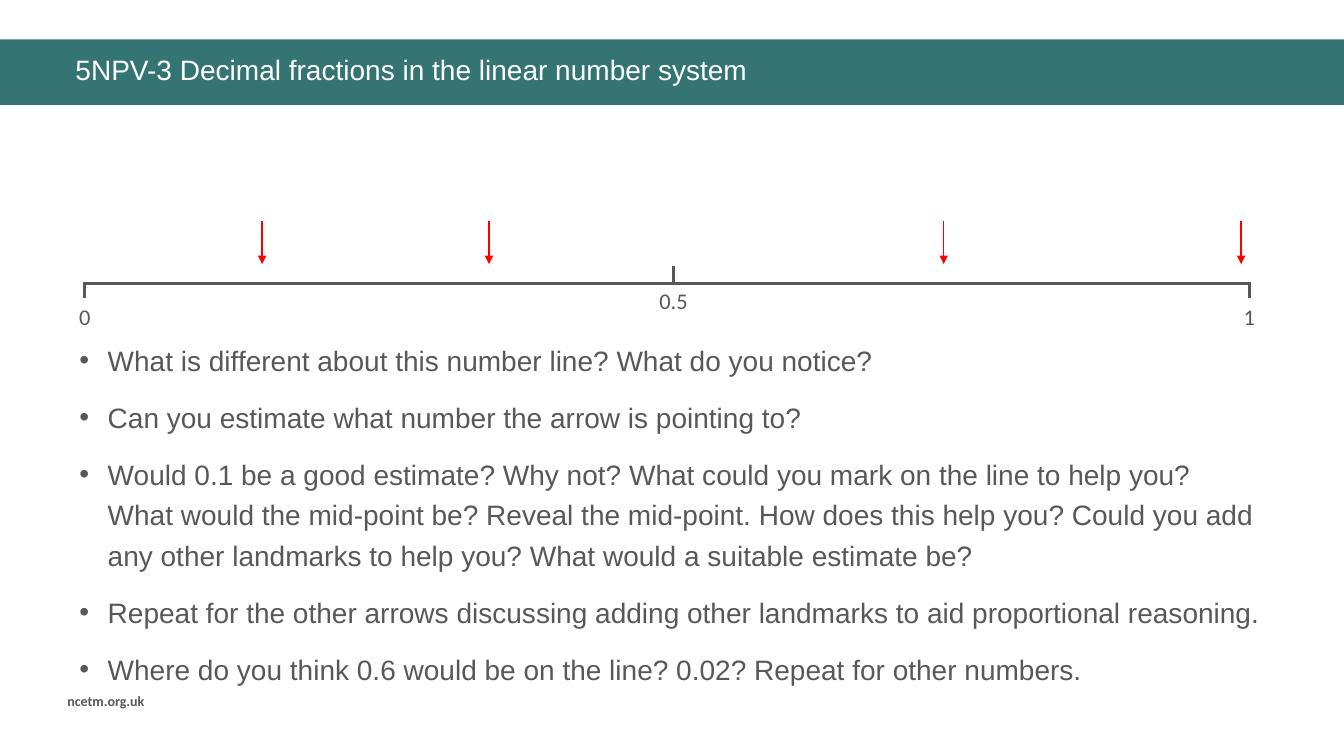
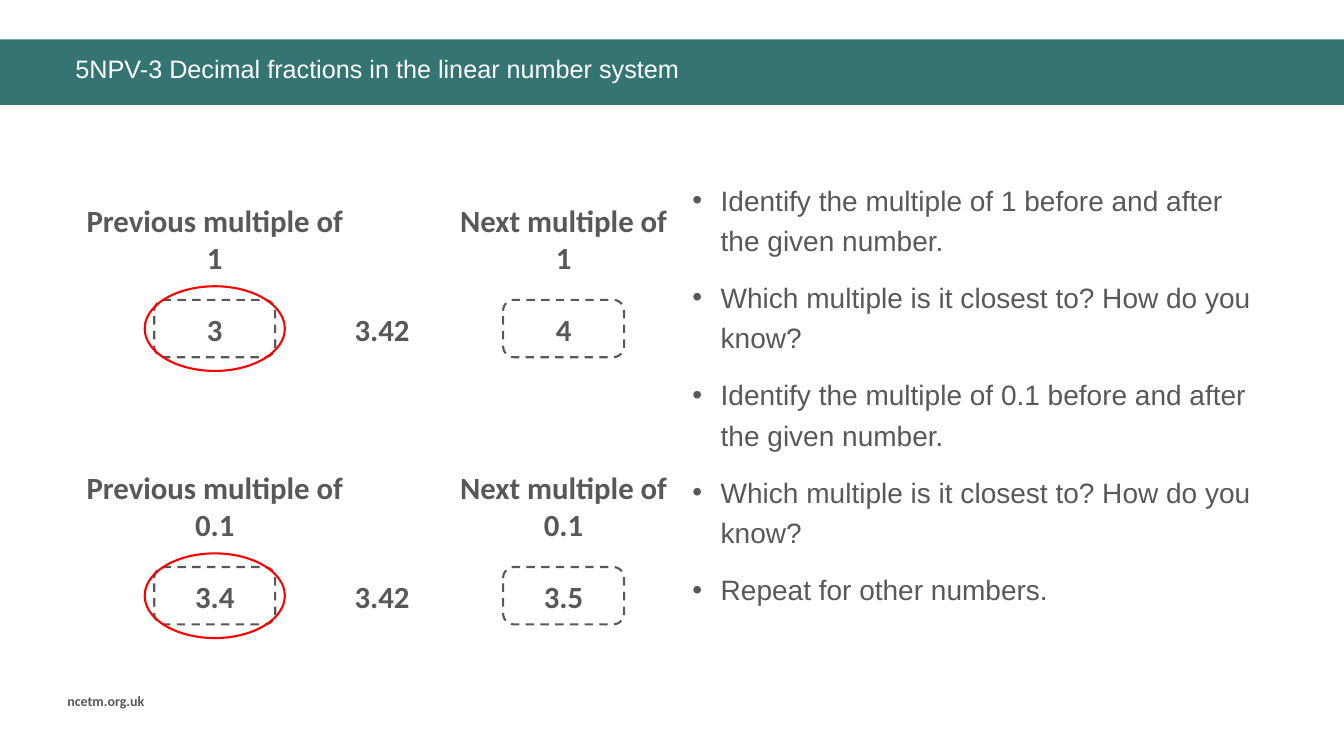
from lxml import etree
from pptx import Presentation
from pptx import util as u
from pptx.dml.color import RGBColor
from pptx.enum import dml, shapes, text
from pptx.oxml.ns import qn

TEAL = RGBColor(0x34, 0x75, 0x74)
GREY = RGBColor(0x58, 0x58, 0x58)
RED = RGBColor(0xFF, 0x00, 0x00)
WHITE = RGBColor(0xFF, 0xFF, 0xFF)

WIDTH, HEIGHT = 13.33, 7.5
CENTRE = text.PP_ALIGN.CENTER
SHAPE = shapes.MSO_SHAPE

TITLE = "5NPV-3 Decimal fractions in the linear number system"
FOOTER = "ncetm.org.uk"

LINE_QUESTIONS = [
    "What is different about this number line? What do you notice?",
    "Can you estimate what number the arrow is pointing to?",
    "Would 0.1 be a good estimate? Why not? What could you mark on the line to help you? "
    "What would the mid-point be? Reveal the mid-point. How does this help you? "
    "Could you add any other landmarks to help you? What would a suitable estimate be?",
    "Repeat for the other arrows discussing adding other landmarks to aid proportional reasoning.",
    "Where do you think 0.6 would be on the line? 0.02? Repeat for other numbers.",
]
CLOSEST = "Which multiple is it closest to? How do you know?"
MULTIPLE_QUESTIONS = [
    "Identify the multiple of 1 before and after the given number.",
    CLOSEST,
    "Identify the multiple of 0.1 before and after the given number.",
    CLOSEST,
    "Repeat for other numbers.",
]

# label, x of the tick, top of the tick, top of the label
TICKS = [("0", 0.84, 2.8, 2.96), ("0.5", 6.68, 2.64, 2.8), ("1", 12.39, 2.8, 2.96)]
TICK_HEIGHT, LINE_Y = 0.16, 2.81
ARROW_XS = [2.6, 4.85, 9.36, 12.31]
ARROW_TOP, ARROW_END = 2.19, 2.62

# multiple, previous, given, next
ROUNDINGS = [("1", "3", "3.42", "4"), ("0.1", "3.4", "3.42", "3.5")]
PREVIOUS_X, GIVEN_X, NEXT_X = 2.13, 3.79, 5.59
FIRST_ROW_Y, ROW_PITCH = 3.26, 2.65

LABEL = {"size": u.Pt(16), "name": "Calibri"}
NUMBER = {"size": u.Pt(22), "name": "Calibri", "bold": True}
BODY = {"size": u.Pt(20), "name": "Arial"}


def inches(*lengths):
    return [u.Inches(length) for length in lengths]


def set_font(paragraph, style, colour):
    for key, value in style.items():
        setattr(paragraph.font, key, value)
    paragraph.font.color.rgb = colour


def add_text(slide, words, box, style, colour=GREY, **layout):
    frame = slide.shapes.add_textbox(*inches(*box)).text_frame
    frame.word_wrap = True
    paragraph = frame.paragraphs[0]
    paragraph.text = words
    for key, value in layout.items():
        setattr(paragraph, key, value)
    set_font(paragraph, style, colour)


def add_centred(slide, words, x, top, width, height, style):
    add_text(slide, words, (x - width / 2, top, width, height), style, alignment=CENTRE)


def add_bullets(slide, questions, box):
    frame = slide.shapes.add_textbox(*inches(*box)).text_frame
    frame.word_wrap = True
    for i, question in enumerate(questions):
        paragraph = frame.add_paragraph() if i else frame.paragraphs[0]
        paragraph.text = question
        paragraph.line_spacing = 1.2
        paragraph.space_before = u.Pt(6 if i else 0)
        paragraph.space_after = u.Pt(6)
        properties = paragraph._p.get_or_add_pPr()
        properties.set("marL", str(u.Inches(0.28)))
        properties.set("indent", str(-u.Inches(0.28)))
        etree.SubElement(properties, qn("a:buFont"), typeface="Arial")
        etree.SubElement(properties, qn("a:buChar"), char="•")
        set_font(paragraph, BODY, GREY)


def add_line(slide, start, end, colour, weight, arrow=False):
    line = slide.shapes.add_connector(
        shapes.MSO_CONNECTOR.STRAIGHT, *inches(*start, *end))
    line.line.color.rgb = colour
    line.line.width = u.Pt(weight)
    if arrow:
        etree.SubElement(line.line._get_or_add_ln(), qn("a:tailEnd"), type="triangle")
    etree.SubElement(line._element.spPr, qn("a:effectLst"))


def add_outline(slide, kind, x, y, width, height, colour):
    """Draw an unfilled shape centred on x, y."""
    outline = slide.shapes.add_shape(
        kind, *inches(x - width / 2, y - height / 2, width, height))
    outline.shadow.inherit = False
    outline.fill.background()
    outline.line.color.rgb = colour
    outline.line.width = u.Pt(1.5)
    return outline


def add_dashed_box(slide, x, y):
    box = add_outline(slide, SHAPE.ROUNDED_RECTANGLE, x, y, 1.2, 0.57, GREY)
    box.adjustments[0] = 0.19
    box.line.dash_style = dml.MSO_LINE.DASH


def new_slide(deck, title_size):
    slide = deck.slides.add_slide(deck.slide_layouts[6])
    band = slide.shapes.add_shape(SHAPE.RECTANGLE, *inches(0, 0.39, WIDTH, 0.65))
    band.shadow.inherit = False
    band.fill.solid()
    band.fill.fore_color.rgb = TEAL
    band.line.fill.background()
    add_text(slide, FOOTER, (0.57, 6.82, 1.21, 0.27),
             {"size": u.Pt(10), "name": "Calibri", "bold": True})
    add_text(slide, TITLE, (0.65, 0.51, 12.32, 0.47),
             {"size": u.Pt(title_size), "name": "Arial"}, WHITE, line_spacing=0.9)
    return slide


def number_line_slide(deck):
    slide = new_slide(deck, 20)
    add_line(slide, (TICKS[0][1], LINE_Y), (TICKS[-1][1], LINE_Y), GREY, 2.25)
    for label, x, tick_top, label_top in TICKS:
        add_line(slide, (x, tick_top), (x, tick_top + TICK_HEIGHT), GREY, 2)
        add_centred(slide, label, x, label_top, 1.2, 0.37, LABEL)
    for x in ARROW_XS:
        add_line(slide, (x, ARROW_TOP), (x, ARROW_END), RED, 1, arrow=True)
    add_bullets(slide, LINE_QUESTIONS, (0.69, 3.29, 11.93, 3.7))


def multiples_slide(deck):
    slide = new_slide(deck, 18)
    for row, (multiple, previous, given, following) in enumerate(ROUNDINGS):
        y = FIRST_ROW_Y + row * ROW_PITCH
        for side, x, width in (("Previous", PREVIOUS_X, 2.91), ("Next", NEXT_X, 2.29)):
            add_centred(slide, f"{side} multiple of {multiple}", x, y - 1.31, width, 0.84, NUMBER)
            add_dashed_box(slide, x, y)
        for number, x in ((previous, PREVIOUS_X), (given, GIVEN_X), (following, NEXT_X)):
            add_centred(slide, number, x, y - 0.23, 1.06, 0.47, NUMBER)
        add_outline(slide, SHAPE.OVAL, PREVIOUS_X, y, 1.39, 0.84, RED)
    add_bullets(slide, MULTIPLE_QUESTIONS, (6.77, 1.7, 5.9, 4.49))


def main():
    deck = Presentation()
    deck.slide_width, deck.slide_height = inches(WIDTH, HEIGHT)
    number_line_slide(deck)
    multiples_slide(deck)
    deck.save("out.pptx")


if __name__ == "__main__":
    main()
